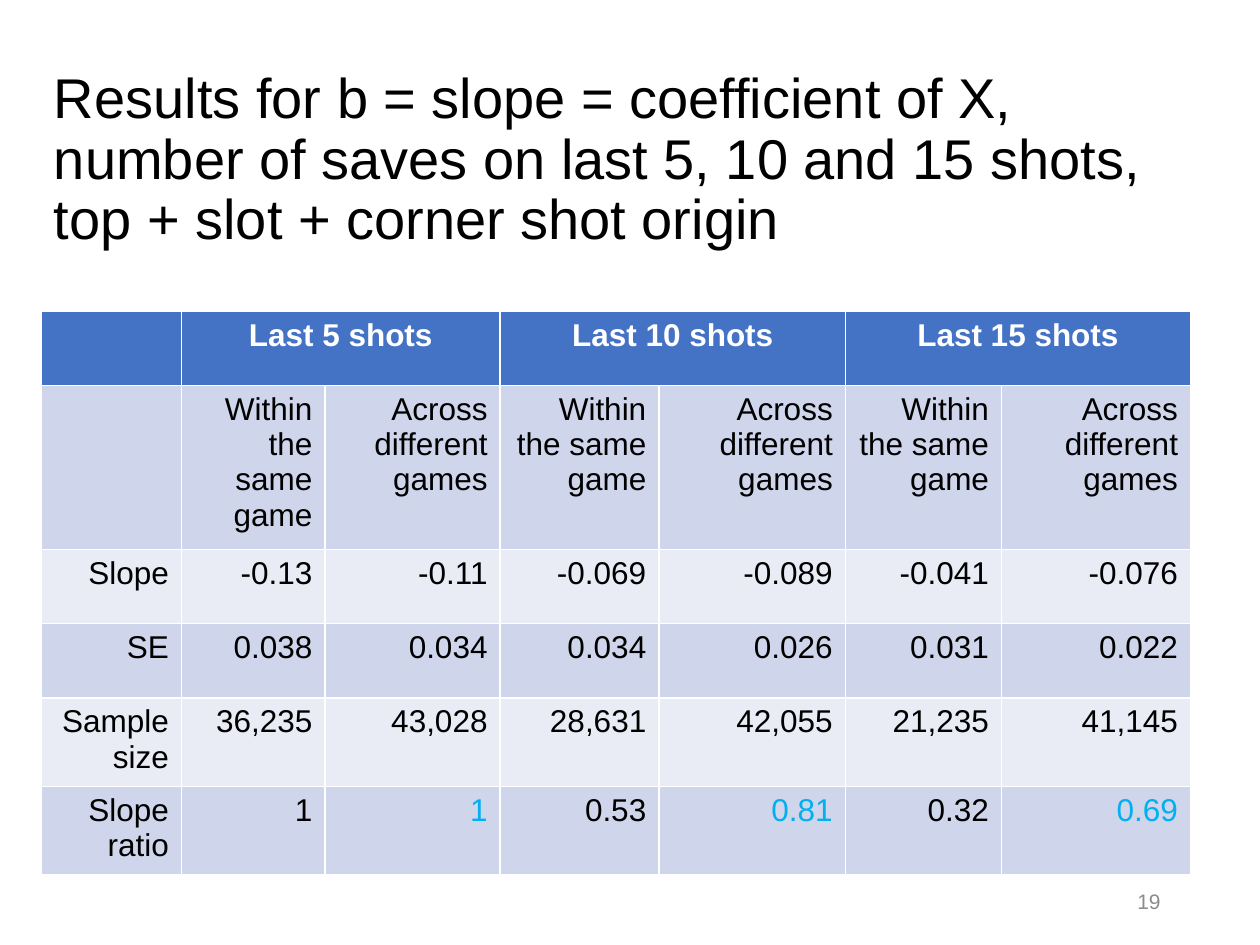
from pptx import Presentation
from pptx.dml.color import RGBColor
from pptx.enum.text import MSO_ANCHOR as Anchor, PP_ALIGN as Align
from pptx.util import Inches, Pt

BLACK = RGBColor(0x00, 0x00, 0x00)
WHITE = RGBColor(0xFF, 0xFF, 0xFF)
GREY = RGBColor(0x8C, 0x8C, 0x8C)
CYAN = RGBColor(0x00, 0xB0, 0xF0)
HEADER_BLUE = RGBColor(0x44, 0x72, 0xC4)
BANDS = (RGBColor(0xE9, 0xEB, 0xF5), RGBColor(0xCF, 0xD5, 0xEA))

TITLE = ("Results for b = slope = coefficient of X, number of saves on last "
         "5, 10 and 15 shots, top + slot + corner shot origin")
SHOT_COUNTS = (5, 10, 15)
RESULTS = [
    ["", *["Within the same game", "Across different games"] * len(SHOT_COUNTS)],
    ["Slope", "-0.13", "-0.11", "-0.069", "-0.089", "-0.041", "-0.076"],
    ["SE", "0.038", "0.034", "0.034", "0.026", "0.031", "0.022"],
    ["Sample size", "36,235", "43,028", "28,631", "42,055", "21,235", "41,145"],
    ["Slope ratio", "1", "1", "0.53", "0.81", "0.32", "0.69"],
]
COLUMN_WIDTHS = (1.11, 1.14, 1.39, 1.26, 1.48, 1.24, 1.5)
ROW_HEIGHTS = (0.59, 1.21, 0.59, 0.59, 0.66, 0.66)


def write_text(frame, text, size, color, align, bold=False, spacing=1.0):
    """Put one formatted paragraph into a text frame."""
    paragraph = frame.paragraphs[0]
    paragraph.alignment = align
    paragraph.line_spacing = spacing
    run = paragraph.add_run()
    run.text = text
    font_format = {"name": "Arial", "size": Pt(size), "bold": bold}
    for attribute, value in font_format.items():
        setattr(run.font, attribute, value)
    run.font.color.rgb = color


def add_label(slide, box, text, size, color, align, spacing=1.0):
    """Add a vertically centred, wrapping line of text in the given box."""
    frame = slide.shapes.add_textbox(*map(Inches, box)).text_frame
    frame.word_wrap = True
    frame.vertical_anchor = Anchor.MIDDLE
    write_text(frame, text, size, color, align, spacing=spacing)


def fill_cell(cell, fill, text, color, align, bold=False):
    """Colour a table cell and write its text, if any."""
    cell.fill.solid()
    cell.fill.fore_color.rgb = fill
    if text:
        write_text(cell.text_frame, text, 18, color, align, bold)


def add_results_table(slide, box):
    """Add the regression results, two columns for each number of shots."""
    table = slide.shapes.add_table(
        len(ROW_HEIGHTS), len(COLUMN_WIDTHS), *map(Inches, box)).table
    for column, width in zip(table.columns, COLUMN_WIDTHS):
        column.width = Inches(width)
    for row, height in zip(table.rows, ROW_HEIGHTS):
        row.height = Inches(height)

    fill_cell(table.cell(0, 0), HEADER_BLUE, "", WHITE, Align.CENTER)
    for group, shots in enumerate(SHOT_COUNTS):
        left = 1 + 2 * group
        heading = table.cell(0, left)
        heading.merge(table.cell(0, left + 1))
        fill_cell(heading, HEADER_BLUE, f"Last {shots} shots", WHITE,
                  Align.CENTER, bold=True)

    for r, values in enumerate(RESULTS, start=1):
        for c, value in enumerate(values):
            across_ratio = values[0] == "Slope ratio" and c in (2, 4, 6)
            fill_cell(table.cell(r, c), BANDS[r % 2], value,
                      CYAN if across_ratio else BLACK, Align.RIGHT)


def main():
    """Build the results slide and save it."""
    presentation = Presentation()
    presentation.slide_width = Inches(10)
    presentation.slide_height = Inches(7.5)
    slide = presentation.slides.add_slide(presentation.slide_layouts[6])
    add_label(slide, (0.33, 0.4, 9.11, 1.76), TITLE, 32, BLACK, Align.LEFT, 0.9)
    add_results_table(slide, (0.33, 2.47, 9.11, sum(ROW_HEIGHTS)))
    add_label(slide, (7.06, 6.95, 2.25, 0.4), "19", 12, GREY, Align.RIGHT)
    presentation.save("out.pptx")


if __name__ == "__main__":
    main()
